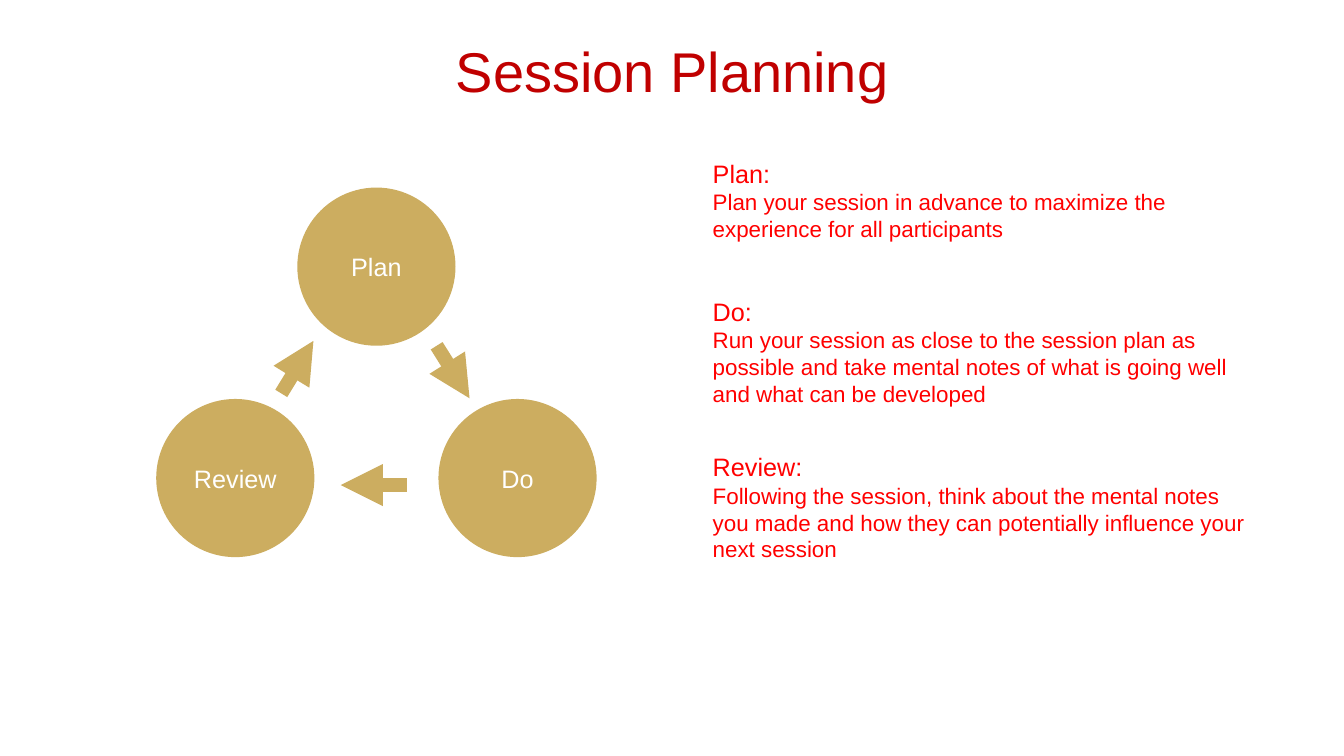
from lxml import etree
from pptx import Presentation
from pptx.dml.color import RGBColor
from pptx.enum.shapes import MSO_CONNECTOR, MSO_SHAPE
from pptx.enum.text import MSO_ANCHOR, PP_ALIGN
from pptx.oxml.ns import qn
from pptx.util import Pt

OVAL = MSO_SHAPE.OVAL
STRAIGHT = MSO_CONNECTOR.STRAIGHT
TOP, MIDDLE = MSO_ANCHOR.TOP, MSO_ANCHOR.MIDDLE
LEFT, CENTER = PP_ALIGN.LEFT, PP_ALIGN.CENTER

COLORS = {"title": "C00000", "gold": "CCAD60", "label": "FFFFFF", "notes": "FF0000"}
FONT = "Arial"
INSET = 3.6

STEPS = [
    ("Plan", "Plan your session in advance to maximize the experience for all participants"),
    ("Do", "Run your session as close to the session plan as possible and take mental "
           "notes of what is going well and what can be developed"),
    ("Review", "Following the session, think about the mental notes you made and how they "
               "can potentially influence your next session"),
]


def color(name):
    """Return the named palette colour."""
    return RGBColor.from_string(COLORS[name])


def write_text(shape, lines, color_name, alignment, anchor):
    """Fill a shape with (text, size) paragraphs in one colour."""
    frame = shape.text_frame
    frame.word_wrap = True
    frame.vertical_anchor = anchor
    frame.margin_left = frame.margin_right = Pt(INSET)
    frame.margin_top = frame.margin_bottom = Pt(INSET)
    frame.text = "\n".join(text for text, size in lines)
    for paragraph, (text, size) in zip(frame.paragraphs, lines):
        paragraph.alignment = alignment
        for run in paragraph.runs:
            run.font.name = FONT
            run.font.size = Pt(size)
            run.font.color.rgb = color(color_name)


def add_title(slide, left, top, width, height):
    """Place the centred slide title."""
    title = slide.shapes.add_textbox(Pt(left), Pt(top), Pt(width), Pt(height))
    write_text(title, [("Session Planning", 40)], "title", CENTER, MIDDLE)
    title.text_frame.paragraphs[0].line_spacing = 0.9


def add_arrow(slide, start, end):
    """Draw a thick gold arrow from start to end."""
    arrow = slide.shapes.add_connector(STRAIGHT, *map(Pt, start + end))
    arrow.line.color.rgb = color("gold")
    arrow.line.width = Pt(10)
    line = arrow.line._get_or_add_ln()
    etree.SubElement(line, qn("a:tailEnd"), type="triangle")
    etree.SubElement(arrow._element.spPr, qn("a:effectLst"))


def add_cycle(slide, left, top, width, height):
    """Draw the three step circles in a triangle, joined by arrows."""
    diameter = 113
    middle = left + width / 2
    bottom = top + height - diameter
    corners = [(middle - diameter / 2, top), (left + width - diameter, bottom), (left, bottom)]
    for (step, note), (x, y) in zip(STEPS, corners):
        circle = slide.shapes.add_shape(OVAL, Pt(x), Pt(y), Pt(diameter), Pt(diameter))
        circle.shadow.inherit = False
        circle.fill.solid()
        circle.fill.fore_color.rgb = color("gold")
        circle.line.fill.background()
        write_text(circle, [(step, 18)], "label", CENTER, MIDDLE)
    add_arrow(slide, (middle + 43, top + 113), (middle + 66.5, top + 150.5))
    add_arrow(slide, (middle + 21.5, top + 212.5), (middle - 25.5, top + 212.5))
    add_arrow(slide, (middle - 68, top + 147), (middle - 45, top + 109.5))


def add_notes(slide, left, top, width):
    """Place the explanation of each step down the right side."""
    boxes = [(0, 63.5), (98.5, 98), (209.5, 98)]
    for (step, note), (offset, height) in zip(STEPS, boxes):
        box = slide.shapes.add_textbox(Pt(left), Pt(top + offset), Pt(width), Pt(height))
        write_text(box, [(f"{step}:", 18), (note, 16)], "notes", LEFT, TOP)


def main():
    """Build and save the session planning slide."""
    presentation = Presentation()
    presentation.slide_width = Pt(960)
    presentation.slide_height = Pt(540)
    slide = presentation.slides.add_slide(presentation.slide_layouts[6])
    add_title(slide, 66, 27.4, 828, 52)
    add_cycle(slide, 111.6, 134, 314.6, 264)
    add_notes(slide, 505.5, 109.5, 389)
    presentation.save("out.pptx")


if __name__ == "__main__":
    main()
